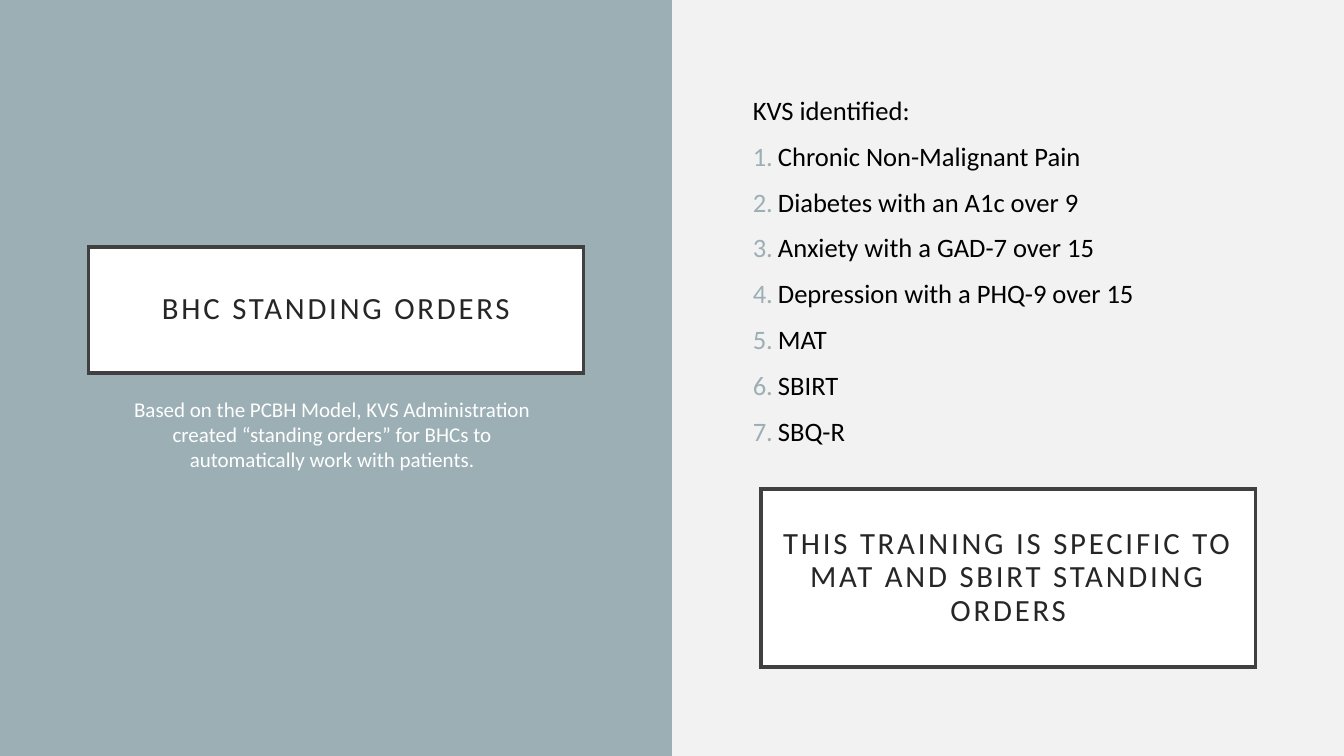
import pptx
import pptx.util
import pptx.dml.color
import pptx.enum.shapes
import pptx.enum.text
import pptx.oxml
import pptx.oxml.ns

Pt = pptx.util.Pt
ALIGN = pptx.enum.text.PP_ALIGN
ANCHOR = pptx.enum.text.MSO_ANCHOR
RECT = pptx.enum.shapes.MSO_SHAPE.RECTANGLE
SPACE = pptx.oxml.ns.nsdecls("a")

COLORS = {"page": "F2F2F2", "panel": "9BAFB5", "white": "FFFFFF",
          "frame": "404040", "ink": "262626", "black": "000000"}
WIDE, HIGH = 960, 540
CARD_W = 353.5
ORDERS = ["Chronic Non-Malignant Pain", "Diabetes with an A1c over 9",
          "Anxiety with a GAD-7 over 15", "Depression with a PHQ-9 over 15",
          "MAT", "SBIRT", "SBQ-R"]


def rgb(name):
    return pptx.dml.color.RGBColor.from_string(COLORS[name])


def apply(item, **values):
    for name, value in values.items():
        setattr(item, name, value)


def place(shape, left, top, width, height):
    apply(shape, left=Pt(left), top=Pt(top), width=Pt(width), height=Pt(height))


def paint(shape, color):
    shape.fill.solid()
    shape.fill.fore_color.rgb = rgb(color)


def write(para, text, size, color, **values):
    """Fill a paragraph with one run and format both."""
    run = para.add_run()
    run.text = text
    apply(run.font, name="Calibri", size=Pt(size), bold=False)
    run.font.color.rgb = rgb(color)
    apply(para, **values)
    return run


def indent(para, left, first):
    props = para._p.get_or_add_pPr()
    props.set("marL", str(Pt(left)))
    props.set("indent", str(Pt(first)))
    return props


def append(parent, *tags):
    for tag in tags:
        parent.append(pptx.oxml.parse_xml(tag))


def frame(shape, anchor):
    text = shape.text_frame
    apply(text, word_wrap=True, vertical_anchor=anchor,
          auto_size=pptx.enum.text.MSO_AUTO_SIZE.NONE)
    return text


def panel(slide, box):
    """Put the coloured half behind everything else."""
    shape = slide.shapes.add_shape(RECT, 0, 0, 0, 0)
    place(shape, *box)
    paint(shape, "panel")
    shape.line.fill.background()
    shape.shadow.inherit = False
    slide.shapes.element.insert(2, shape.element)


def card(shape, box, text):
    """Style a shape as a framed white card with spaced capitals."""
    place(shape, *box)
    paint(shape, "white")
    shape.line.color.rgb = rgb("frame")
    shape.line.width = Pt(2.5)
    append(shape.line._get_or_add_ln(), f'<a:miter {SPACE} lim="800000"/>')
    body = frame(shape, ANCHOR.MIDDLE)
    for side in ("left", "top", "right", "bottom"):
        setattr(body, f"margin_{side}", Pt(14.4))
    run = write(body.paragraphs[0], text, 22, "ink",
                alignment=ALIGN.CENTER, line_spacing=0.9)
    run.font._element.set("spc", "200")


def listing(shape, box):
    place(shape, *box)
    text = frame(shape, ANCHOR.TOP)
    head = text.paragraphs[0]
    write(head, "KVS identified:", 19, "black", space_before=Pt(10))
    append(indent(head, 0, 0), f"<a:buNone {SPACE}/>")
    for order in ORDERS:
        para = text.add_paragraph()
        write(para, order, 19, "black", space_before=Pt(10))
        append(indent(para, 18, -18),
               f'<a:buClr {SPACE}><a:srgbClr val="{COLORS["panel"]}"/></a:buClr>',
               f'<a:buFont {SPACE} typeface="Calibri"/>',
               f'<a:buAutoNum {SPACE} type="arabicPeriod"/>')


def caption(shape, box):
    place(shape, *box)
    para = frame(shape, ANCHOR.TOP).paragraphs[0]
    write(para, "Based on the PCBH Model, KVS Administration created “standing "
          "orders” for BHCs to automatically work with patients.",
          15, "white", alignment=ALIGN.CENTER, space_before=Pt(10))
    indent(para, 0, 0)


def main():
    deck = pptx.Presentation()
    apply(deck, slide_width=Pt(WIDE), slide_height=Pt(HIGH))
    slide = deck.slides.add_slide(deck.slide_layouts[7])
    paint(slide.background, "page")
    title, body, note = slide.placeholders

    panel(slide, (0, 0, WIDE / 2, HIGH))
    card(title, (63.3, 176.4, CARD_W, 90), "BHC STANDING ORDERS")
    listing(body, (530.5, 63.3, 379.5, 413.3))
    caption(note, (87.8, 279.4, 298.8, 69.8))
    focus = slide.shapes.add_shape(RECT, 0, 0, 0, 0)
    focus.shadow.inherit = False
    card(focus, (543.4, 349.2, CARD_W, 127.4),
         "THIS TRAINING IS SPECIFIC TO MAT AND SBIRT STANDING ORDERS")
    deck.save("out.pptx")


if __name__ == "__main__":
    main()
